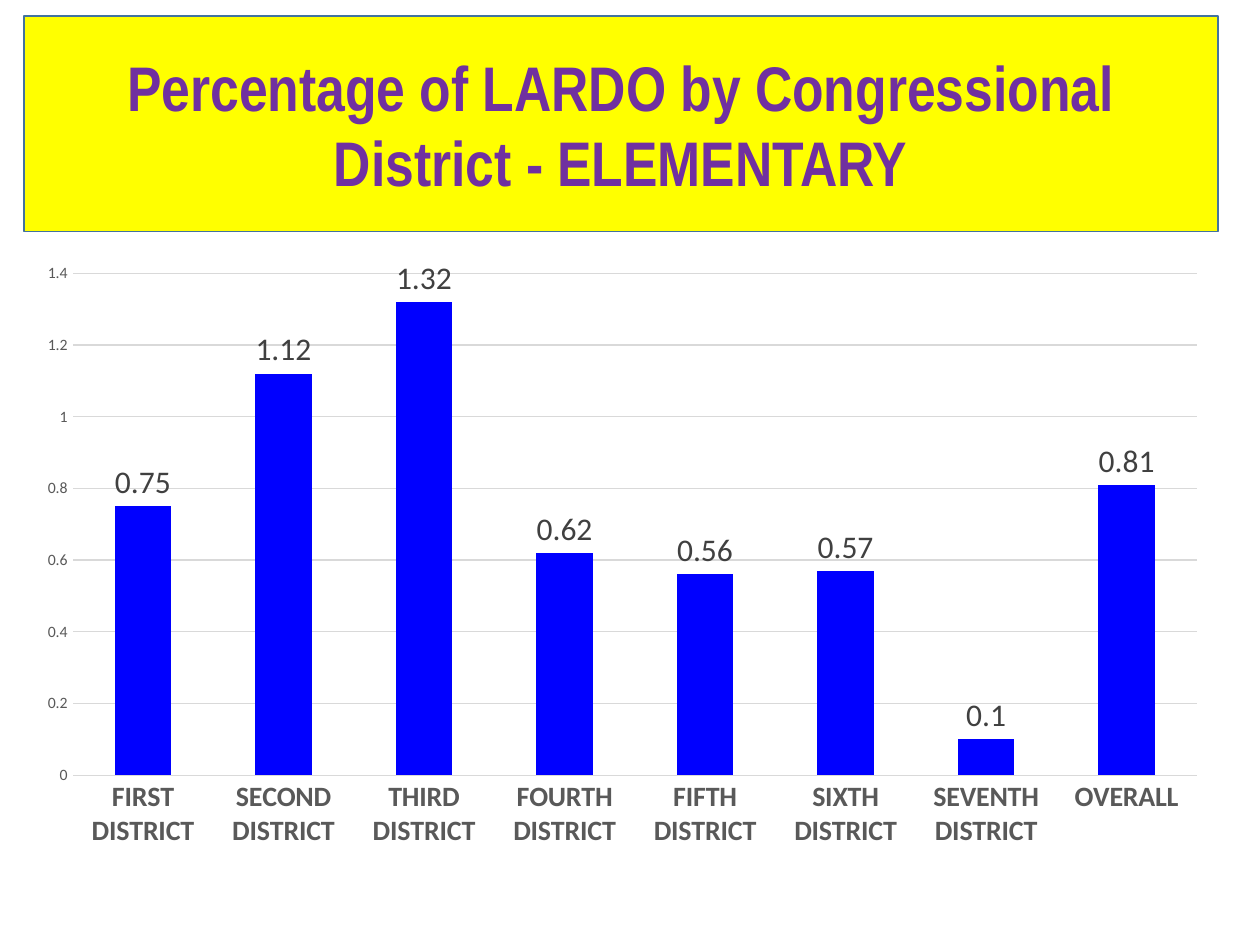
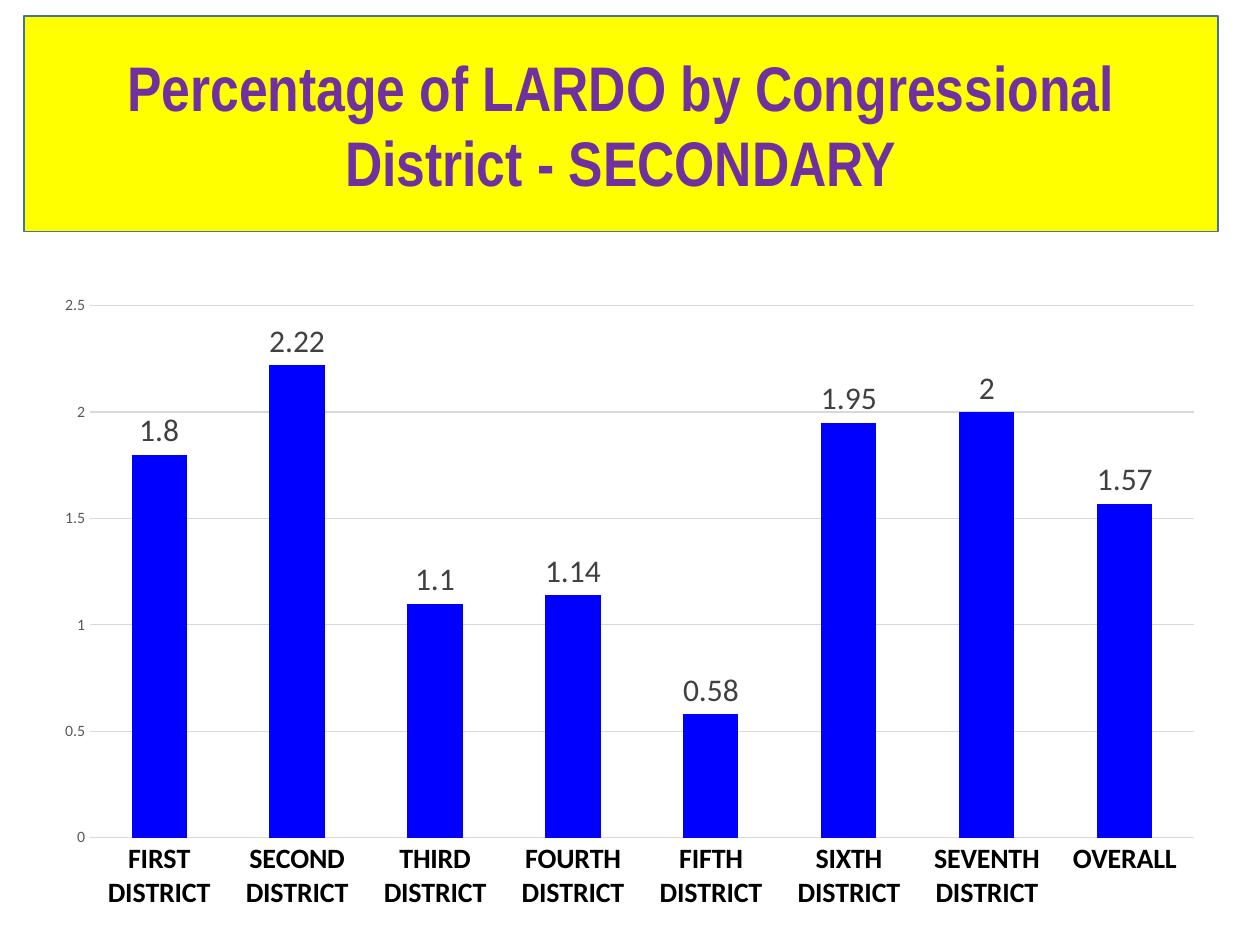
from pptx import Presentation
from pptx.chart.data import CategoryChartData
from pptx.dml.color import RGBColor
from pptx.enum.chart import XL_CHART_TYPE, XL_LABEL_POSITION, XL_TICK_MARK
from pptx.enum.shapes import MSO_SHAPE
from pptx.enum.text import MSO_ANCHOR, PP_ALIGN
from pptx.util import Cm, Pt

COLORS = {
    "band": "FFFF00",
    "edge": "43739E",
    "title": "7030A0",
    "bar": "0000FF",
    "grid": "D9D9D9",
    "axis": "595959",
    "label": "404040",
    "black": "000000",
}
BAND = (0.48, 0.33, 24.08, 4.34)
ORDER = ["FIRST", "SECOND", "THIRD", "FOURTH", "FIFTH", "SIXTH", "SEVENTH"]
GROUPS = [f"{name} DISTRICT" for name in ORDER] + ["OVERALL"]
LEVELS = [
    {
        "level": "ELEMENTARY",
        "box": (0.48, 5.08, 24.13, 12.27),
        "rates": [0.75, 1.12, 1.32, 0.62, 0.56, 0.57, 0.1, 0.81],
        "top": 1.4,
        "step": 0.2,
        "ink": "axis",
    },
    {
        "level": "SECONDARY",
        "box": (0.84, 5.72, 23.7, 12.9),
        "rates": [1.8, 2.22, 1.1, 1.14, 0.58, 1.95, 2, 1.57],
        "top": 2.5,
        "step": 0.5,
        "ink": "black",
    },
]


def color(key):
    """Return the named colour."""
    return RGBColor.from_string(COLORS[key])


def style(font, size, ink, face="Calibri", bold=False):
    """Format a font."""
    font.name = face
    font.size = Pt(size)
    font.bold = bold
    font.color.rgb = color(ink)


def write(frame, text, align=PP_ALIGN.CENTER, **form):
    """Write one formatted paragraph in a text frame."""
    frame.word_wrap = True
    frame.vertical_anchor = MSO_ANCHOR.MIDDLE
    line = frame.paragraphs[0]
    line.alignment = align
    run = line.add_run()
    run.text = text
    style(run.font, **form)


def add_band(slide, box, text):
    """Draw the title band in the box."""
    band = slide.shapes.add_shape(MSO_SHAPE.RECTANGLE, *map(Cm, box))
    band.shadow.inherit = False
    band.fill.solid()
    band.fill.fore_color.rgb = color("band")
    band.line.color.rgb = color("edge")
    band.line.width = Pt(1)
    write(band.text_frame, text, size=36, ink="title", face="Arial Narrow", bold=True)


def set_axis(axis, **form):
    """Format an axis without line or ticks."""
    axis.major_tick_mark = axis.minor_tick_mark = XL_TICK_MARK.NONE
    axis.format.line.fill.background()
    style(axis.tick_labels.font, **form)


def add_bars(slide, box, rates, top, step, ink):
    """Draw the column chart of district rates in the box."""
    data = CategoryChartData()
    data.categories = GROUPS
    data.add_series("Series 1", rates)
    frame = slide.shapes.add_chart(XL_CHART_TYPE.COLUMN_CLUSTERED, *map(Cm, box), data)
    chart = frame.chart
    chart.has_title = chart.has_legend = False
    style(chart.font, 10, "black")

    set_axis(chart.category_axis, size=16, ink=ink, bold=True)
    scale = chart.value_axis
    set_axis(scale, size=9, ink="axis")
    scale.minimum_scale, scale.maximum_scale, scale.major_unit = 0, top, step
    scale.has_major_gridlines = True
    grid = scale.major_gridlines.format.line
    grid.color.rgb = color("grid")
    grid.width = Pt(0.75)

    plot = chart.plots[0]
    plot.gap_width = 150
    plot.vary_by_categories = False
    bars = plot.series[0]
    bars.format.fill.solid()
    bars.format.fill.fore_color.rgb = color("bar")
    labels = bars.data_labels
    labels.show_value = True
    labels.position = XL_LABEL_POSITION.OUTSIDE_END
    style(labels.font, 18, "label")


def add_level(deck, level, **bars):
    """Add the slide of one school level."""
    slide = deck.slides.add_slide(deck.slide_layouts[6])
    add_band(slide, BAND, f"Percentage of LARDO by Congressional District - {level}")
    add_bars(slide, **bars)


def main():
    """Build and save the deck."""
    deck = Presentation()
    deck.slide_width, deck.slide_height = Cm(25.4), Cm(19.05)
    for level in LEVELS:
        add_level(deck, **level)
    deck.save("out.pptx")


if __name__ == "__main__":
    main()
